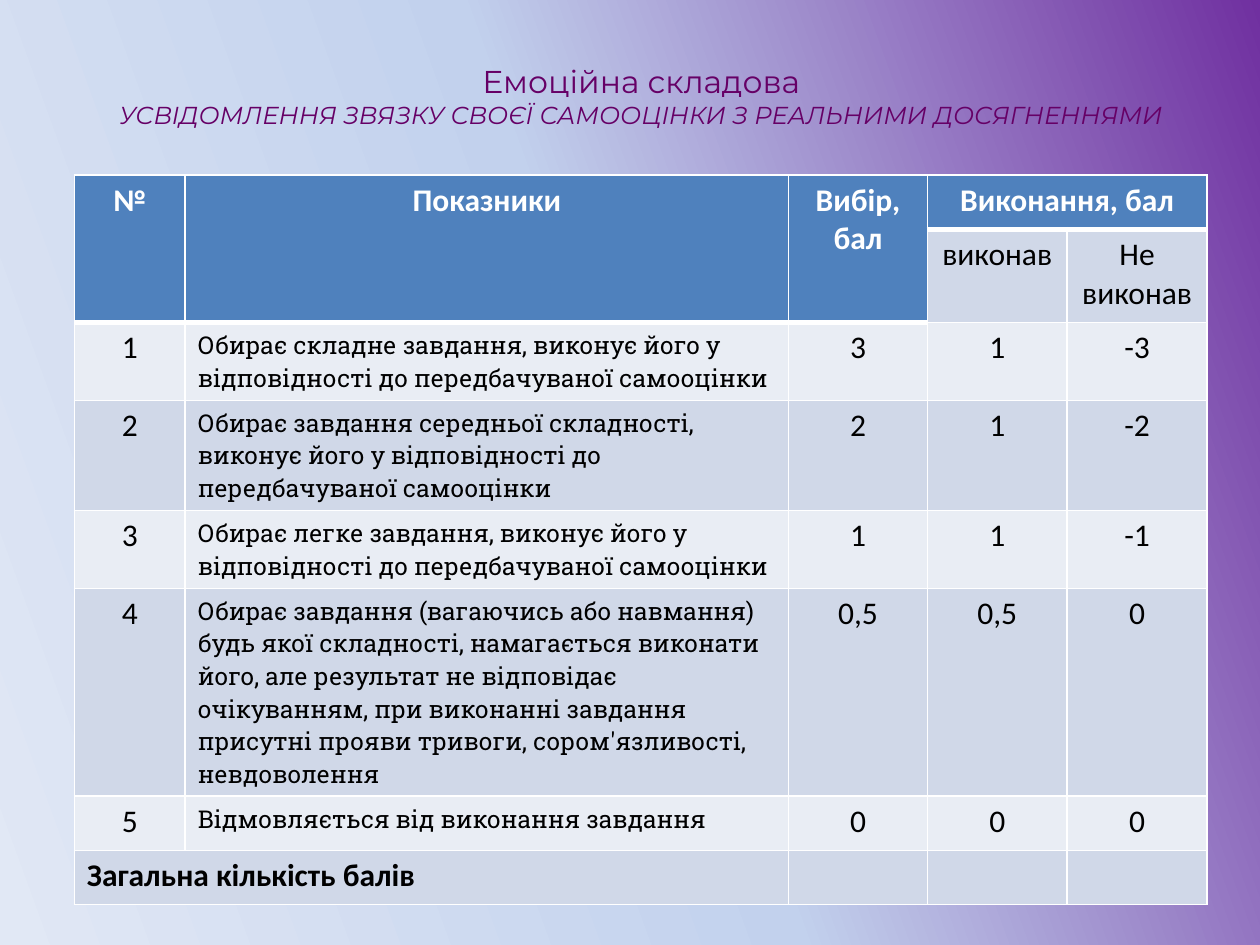
from copy import deepcopy
from lxml.etree import SubElement
from pptx import Presentation
from pptx.dml.color import RGBColor
from pptx.enum.text import MSO_ANCHOR, PP_ALIGN
from pptx.oxml.ns import qn
from pptx.util import Inches, Pt

TITLE = [
    ("Емоційна складова", 18, False),
    ("УСВІДОМЛЕННЯ ЗВЯЗКУ СВОЄЇ САМООЦІНКИ З РЕАЛЬНИМИ ДОСЯГНЕННЯМИ", 14, True),
]
ROWS = [
    ("№", "Показники", "Вибір, бал", "Виконання, бал", ""),
    ("", "", "", "виконав", "Не виконав"),
    ("1", "Обирає складне завдання, виконує його у відповідності до передбачуваної самооцінки",
     "3", "1", "-3"),
    ("2", "Обирає завдання середньої складності, виконує його у відповідності до передбачуваної самооцінки",
     "2", "1", "-2"),
    ("3", "Обирає легке завдання, виконує його у відповідності до передбачуваної самооцінки",
     "1", "1", "-1"),
    ("4", "Обирає завдання (вагаючись або навмання) будь якої складності, намагається виконати його, "
          "але результат не відповідає очікуванням, при виконанні завдання присутні прояви тривоги, "
          "сором'язливості, невдоволення", "0,5", "0,5", "0"),
    ("5", "Відмовляється від виконання завдання", "0", "0", "0"),
    ("Загальна кількість балів", "", "", "", ""),
]
COL_WIDTHS = [0.88, 4.79, 1.1, 1.11, 1.11]
ROW_HEIGHTS = [0.43, 0.74, 0.6, 0.85, 0.6, 1.59, 0.43, 0.43]
MERGES = [((0, 0), (1, 0)), ((0, 1), (1, 1)), ((0, 2), (1, 2)),
          ((0, 3), (0, 4)), ((7, 0), (7, 1))]

PURPLE = RGBColor(0x66, 0x00, 0x66)
WHITE = RGBColor(0xFF, 0xFF, 0xFF)
BLACK = RGBColor(0x00, 0x00, 0x00)
HEADER = RGBColor(0x4F, 0x81, 0xBD)
BANDS = [RGBColor(0xE9, 0xED, 0xF4), RGBColor(0xD0, 0xD8, 0xE8)]
GRADIENT = [(0, RGBColor(0x70, 0x30, 0xA0)), (0.5, RGBColor(0xC2, 0xD1, 0xED)),
            (1, RGBColor(0xE1, 0xE8, 0xF5))]


def add_run(p, text, color, **formats):
    r = p.add_run()
    r.text = text
    for name, value in formats.items():
        setattr(r.font, name, value)
    r.font.color.rgb = color


def set_borders(cell, widths):
    tc_pr = cell._tc.get_or_add_tcPr()
    for side, width in widths.items():
        ln = SubElement(tc_pr, qn(f"a:ln{side}"), w=str(Pt(width)))
        fill = SubElement(ln, qn("a:solidFill"))
        SubElement(fill, qn("a:srgbClr"), val=str(WHITE))


def is_header(row, col):
    return row == 0 or (row == 1 and col < 3)


def fill_background(s):
    fill = s.background.fill
    fill.gradient()
    fill.gradient_angle = 200
    stops = s.element.find(".//" + qn("a:gsLst"))
    stops.append(deepcopy(stops[-1]))
    for stop, (position, color) in zip(fill.gradient_stops, GRADIENT):
        stop.position = position
        stop.color.rgb = color


def add_title(s):
    sp = s.shapes.title
    sp.left, sp.top, sp.width, sp.height = map(Inches, (0.59, 0.21, 9, 1.1))
    tf = sp.text_frame
    tf.vertical_anchor = MSO_ANCHOR.MIDDLE
    p = tf.paragraphs[0]
    p.alignment = PP_ALIGN.CENTER
    for i, (text, size, italic) in enumerate(TITLE):
        if i:
            p.add_line_break()
        add_run(p, text, PURPLE, name="Montserrat", size=Pt(size), italic=italic)


def add_score_table(s):
    frame = s.shapes.add_table(len(ROWS), len(COL_WIDTHS), Inches(0.59), Inches(1.39),
                               Inches(sum(COL_WIDTHS)), Inches(sum(ROW_HEIGHTS)))
    table = frame.table
    table.first_row = table.horz_banding = False
    for column, width in zip(table.columns, COL_WIDTHS):
        column.width = Inches(width)
    for row, height in zip(table.rows, ROW_HEIGHTS):
        row.height = Inches(height)

    for i, texts in enumerate(ROWS):
        for j, text in enumerate(texts):
            cell = table.cell(i, j)
            header = is_header(i, j)
            below_header = i > 0 and not header and is_header(i - 1, j)
            set_borders(cell, {"L": 1, "R": 1, "T": 3 if below_header else 1,
                               "B": 3 if header else 1})
            cell.fill.solid()
            cell.fill.fore_color.rgb = HEADER if header else BANDS[i % 2]
            if not text:
                continue
            total = i == len(ROWS) - 1
            indicator = j == 1 and not header
            p = cell.text_frame.paragraphs[0]
            p.alignment = PP_ALIGN.LEFT if indicator or total else PP_ALIGN.CENTER
            add_run(p, text, WHITE if header else BLACK,
                    name="Roboto Slab" if indicator else "Calibri",
                    size=Pt(14 if indicator else 18), bold=header or total)
    for start, end in MERGES:
        table.cell(*start).merge(table.cell(*end))


def main():
    prs = Presentation()
    prs.slide_width, prs.slide_height = Inches(10), Inches(7.5)
    s = prs.slides.add_slide(prs.slide_layouts[5])
    fill_background(s)
    add_title(s)
    add_score_table(s)
    prs.save("out.pptx")


if __name__ == "__main__":
    main()
